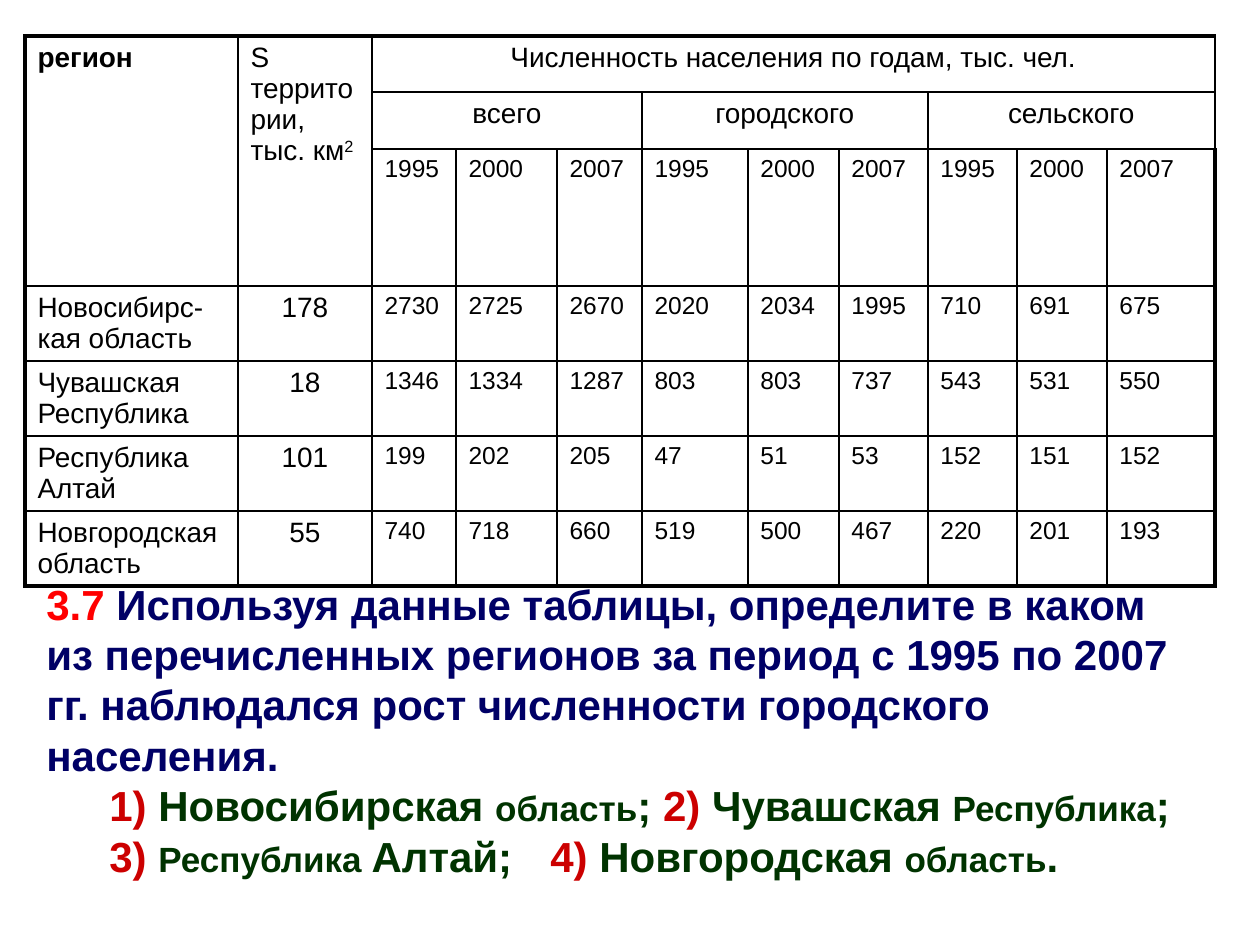
from lxml import etree
from pptx import Presentation
from pptx.dml.color import RGBColor
from pptx.enum.text import MSO_AUTO_SIZE, PP_ALIGN
from pptx.oxml.ns import qn
from pptx.util import Emu, Pt

CENTER, LEFT = PP_ALIGN.CENTER, PP_ALIGN.LEFT
FONT = "Arial"
BLACK, RED, CRIMSON = "000000", "FF0000", "CC0000"
NAVY, GREEN = "000066", "003300"
THIN, THICK = 1, 2.25

COLUMN_WIDTHS = [213, 134, 84, 101, 85, 106, 91, 89, 89, 90, 108]
ROW_HEIGHTS = [56, 57, 137] + [75] * 4
YEARS = ["1995", "2000", "2007"]
GROUPS = ["всего", "городского", "сельского"]
REGIONS = [
    ("Новосибирс-кая область", 178, 2730, 2725, 2670, 2020, 2034, 1995, 710, 691, 675),
    ("Чувашская Республика", 18, 1346, 1334, 1287, 803, 803, 737, 543, 531, 550),
    ("Республика Алтай", 101, 199, 202, 205, 47, 51, 53, 152, 151, 152),
    ("Новгородская область", 55, 740, 718, 660, 519, 500, 467, 220, 201, 193),
]
QUESTION = [
    ("3.7", 24, RED),
    (" Используя данные таблицы, определите в каком из перечисленных регионов "
     "за период с 1995 по 2007 гг. наблюдался рост численности городского "
     "населения.", 24, NAVY),
]
ANSWERS = [
    [("1)", 24, CRIMSON), (" Новосибирская ", 24, GREEN), ("область", 20, GREEN),
     ("; ", 24, GREEN), ("2)", 24, CRIMSON), (" Чувашская ", 24, GREEN),
     ("Республика", 20, GREEN), (";", 24, GREEN)],
    [("3) ", 24, CRIMSON), ("Республика ", 20, GREEN), ("Алтай;\t", 24, GREEN),
     ("4) ", 24, CRIMSON), ("Новгородская ", 24, GREEN), ("область", 20, GREEN),
     (".", 24, GREEN)],
]


def px(length):
    return Emu(round(length * 914400 / 126))


def color(value):
    return RGBColor.from_string(value)


def set_borders(cell, row, column):
    """Draw thin cell borders, thick on the outer edge of the table."""
    edges = {
        "a:lnL": column == 0,
        "a:lnR": column == len(COLUMN_WIDTHS) - 1,
        "a:lnT": row == 0,
        "a:lnB": row == len(ROW_HEIGHTS) - 1,
    }
    properties = cell._tc.get_or_add_tcPr()
    for index, (tag, outer) in enumerate(edges.items()):
        line = etree.Element(qn(tag), w=str(Pt(THICK if outer else THIN)))
        fill = etree.SubElement(line, qn("a:solidFill"))
        etree.SubElement(fill, qn("a:srgbClr"), val=BLACK)
        properties.insert(index, line)


def write_cell(cell, text, size=16, align=LEFT, bold=False):
    para = cell.text_frame.paragraphs[0]
    para.text = str(text)
    para.alignment = align
    para.font.name = FONT
    para.font.size = Pt(size)
    para.font.bold = bold
    para.font.color.rgb = color(BLACK)
    return para


def write_header(table):
    table.cell(0, 0).merge(table.cell(2, 0))
    table.cell(0, 1).merge(table.cell(2, 1))
    table.cell(0, 2).merge(table.cell(0, 10))
    write_cell(table.cell(0, 0), "регион", bold=True)
    area = write_cell(table.cell(0, 1), "S территории, тыс. км")
    square = area.add_run()
    square.text = "2"
    square._r.get_or_add_rPr().set("baseline", "30000")
    write_cell(table.cell(0, 2), "Численность населения по годам, тыс. чел.", align=CENTER)
    for index, group in enumerate(GROUPS):
        first = 2 + index * len(YEARS)
        table.cell(1, first).merge(table.cell(1, first + len(YEARS) - 1))
        write_cell(table.cell(1, first), group, align=CENTER)
        for offset, year in enumerate(YEARS):
            write_cell(table.cell(2, first + offset), year, size=14)


def add_population_table(page):
    frame = page.shapes.add_table(
        len(ROW_HEIGHTS), len(COLUMN_WIDTHS), px(25), px(36),
        px(sum(COLUMN_WIDTHS)), px(sum(ROW_HEIGHTS)))
    table = frame.table
    table.first_row = table.horz_banding = False
    for column, width in zip(table.columns, COLUMN_WIDTHS):
        column.width = px(width)
    for row, height in zip(table.rows, ROW_HEIGHTS):
        row.height = px(height)
    for row in range(len(ROW_HEIGHTS)):
        for column in range(len(COLUMN_WIDTHS)):
            cell = table.cell(row, column)
            cell.fill.background()
            set_borders(cell, row, column)
    write_header(table)
    for row, (region, area, *counts) in enumerate(REGIONS, start=3):
        write_cell(table.cell(row, 0), region)
        write_cell(table.cell(row, 1), area, align=CENTER)
        for column, count in enumerate(counts, start=2):
            write_cell(table.cell(row, column), count, size=14)


def indent(para, margin, tab):
    properties = para._p.get_or_add_pPr()
    properties.set("marL", str(px(margin)))
    properties.set("indent", "0")
    tabs = etree.SubElement(properties, qn("a:tabLst"))
    etree.SubElement(tabs, qn("a:tab"), pos=str(px(tab)), algn="l")


def write_spans(para, spans):
    para.font.name = FONT
    para.font.bold = True
    for text, size, shade in spans:
        span = para.add_run()
        span.text = text
        span.font.size = Pt(size)
        span.font.color.rgb = color(shade)


def add_question(page):
    box = page.shapes.add_textbox(px(34), px(572), px(1171), px(315))
    frame = box.text_frame
    frame.word_wrap = True
    frame.auto_size = MSO_AUTO_SIZE.SHAPE_TO_FIT_TEXT
    write_spans(frame.paragraphs[0], QUESTION)
    for answer in ANSWERS:
        para = frame.add_paragraph()
        indent(para, margin=63, tab=617)
        write_spans(para, answer)


def main():
    deck = Presentation()
    deck.slide_width, deck.slide_height = px(1260), px(945)
    page = deck.slides.add_slide(deck.slide_layouts[6])
    add_population_table(page)
    add_question(page)
    deck.save("out.pptx")


if __name__ == "__main__":
    main()
